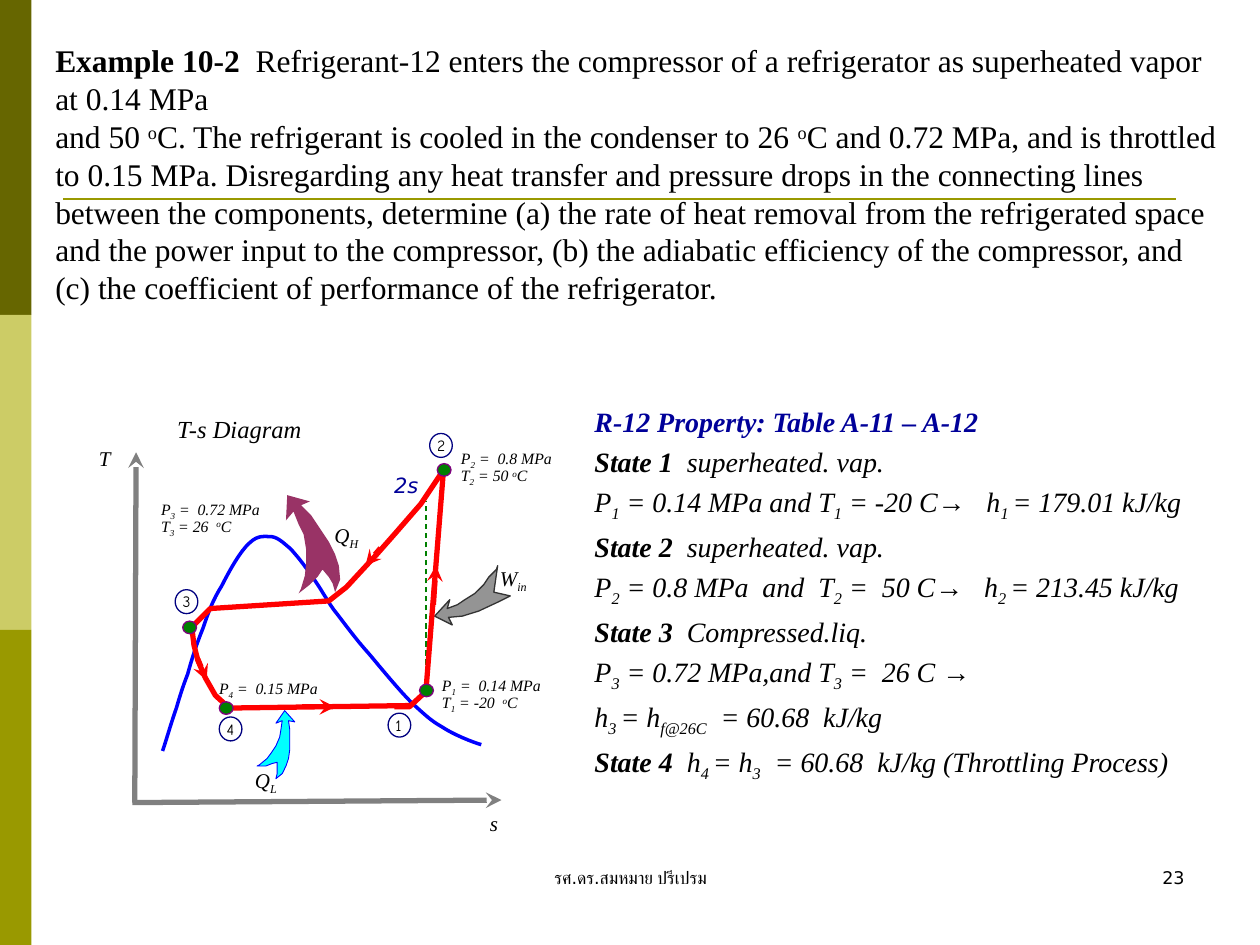
from lxml import etree
from pptx import Presentation
from pptx.dml.color import RGBColor
from pptx.enum.dml import MSO_LINE
from pptx.enum.shapes import MSO_CONNECTOR, MSO_SHAPE
from pptx.enum.text import MSO_AUTO_SIZE, PP_ALIGN
from pptx.oxml.ns import qn
from pptx.util import Cm, Pt

RECTANGLE, ELLIPSE = MSO_SHAPE.RECTANGLE, MSO_SHAPE.OVAL
STRAIGHT, DASH = MSO_CONNECTOR.STRAIGHT, MSO_LINE.DASH
LEFT, CENTER, RIGHT = PP_ALIGN.LEFT, PP_ALIGN.CENTER, PP_ALIGN.RIGHT
GROW, FIXED = MSO_AUTO_SIZE.SHAPE_TO_FIT_TEXT, MSO_AUTO_SIZE.NONE

BLACK = RGBColor(0x00, 0x00, 0x00)
DARK_OLIVE = RGBColor(0x66, 0x66, 0x00)
PALE_OLIVE = RGBColor(0xCC, 0xCC, 0x66)
OLIVE = RGBColor(0x99, 0x99, 0x00)
RED = RGBColor(0xFF, 0x00, 0x00)
BLUE = RGBColor(0x00, 0x00, 0xFF)
NAVY = RGBColor(0x00, 0x00, 0x80)
INK_BLUE = RGBColor(0x00, 0x00, 0x99)
CYAN = RGBColor(0x00, 0xFF, 0xFF)
GREEN = RGBColor(0x00, 0x80, 0x00)
PURPLE = RGBColor(0x80, 0x00, 0x80)
PLUM = RGBColor(0x99, 0x33, 0x66)
GRAY = RGBColor(0x80, 0x80, 0x80)
CHARCOAL = RGBColor(0x33, 0x33, 0x33)

SERIF, SANS, HAND = "Times New Roman", "DejaVu Sans", "Comic Neue"
BASELINES = {"_": "-25000", "^": "30000"}


def inches(value):
    return Cm(value * 2.54)


def curve_points(start, segments, steps=8):
    points = [start]
    for x1, y1, x2, y2, x3, y3 in segments:
        x0, y0 = points[-1]
        for step in range(1, steps + 1):
            t = step / steps
            weights = (1 - t) ** 3, 3 * t * (1 - t) ** 2, 3 * t * t * (1 - t), t ** 3
            points.append(tuple(sum(w * c for w, c in zip(weights, values))
                                for values in ((x0, x1, x2, x3), (y0, y1, y2, y3))))
    return points


class SlideBuilder:
    def __init__(self, slide):
        self.slide = slide
        self.font = SERIF

    def paint(self, shape, fill=None, line=None, width=0.75, alpha=None):
        shape.shadow.inherit = False
        if fill is None:
            shape.fill.background()
        else:
            shape.fill.solid()
            shape.fill.fore_color.rgb = fill
        if alpha:
            color = shape._element.spPr.find(qn("a:solidFill"))[0]
            etree.SubElement(color, qn("a:alpha")).set("val", str(alpha * 1000))
        if line is None:
            shape.line.fill.background()
        else:
            shape.line.color.rgb = line
            shape.line.width = Pt(width)

    def shape(self, kind, left, top, width, height, **paint):
        box = map(inches, (left, top, width, height))
        self.paint(self.slide.shapes.add_shape(kind, *box), **paint)

    def outline(self, points, closed=True, **paint):
        start, *rest = [(inches(x), inches(y)) for x, y in points]
        builder = self.slide.shapes.build_freeform(*start)
        builder.add_line_segments(rest, close=closed)
        self.paint(builder.convert_to_shape(), **paint)

    def line(self, start, end, color=RED, width=3, arrow=False, dash=None):
        ends = map(inches, (*start, *end))
        connector = self.slide.shapes.add_connector(STRAIGHT, *ends)
        connector.line.color.rgb = color
        connector.line.width = Pt(width)
        if dash:
            connector.line.dash_style = dash
        properties = connector._element.spPr
        if arrow:
            tail = etree.SubElement(properties.find(qn("a:ln")), qn("a:tailEnd"))
            tail.set("type", "stealth")
        etree.SubElement(properties, qn("a:effectLst"))

    def text(self, box, lines, size, font=None, color=BLACK, title_color=None,
             align=LEFT, italic=False, before=0, spacing=None, wrap=True, grow=True):
        shape = self.slide.shapes.add_textbox(*map(inches, box))
        frame = shape.text_frame
        frame.word_wrap = wrap
        frame.auto_size = GROW if grow else FIXED
        for index, line in enumerate(lines):
            paragraph = frame.paragraphs[0] if index == 0 else frame.add_paragraph()
            paragraph.alignment = align
            paragraph.space_before = Pt(before)
            if spacing:
                paragraph.line_spacing = spacing
            paragraph.font.name = font or self.font
            paragraph.font.size = Pt(size)
            paragraph.font.italic = italic
            paragraph.font.color.rgb = title_color if title_color and index == 0 else color
            for piece in line.split("|"):
                run = paragraph.add_run()
                run.text = piece.lstrip("*_^")
                if piece.startswith("*"):
                    run.font.bold = True
                elif piece[:1] in BASELINES:
                    run._r.get_or_add_rPr().set("baseline", BASELINES[piece[0]])

    def state_number(self, number, left, top):
        self.text((left - 0.04, top - 0.03, 0.22, 0.25), [number], 9, HAND,
                  align=CENTER, before=5.4)
        self.shape(ELLIPSE, left, top, 0.18, 0.19, line=NAVY)

    def state_point(self, left, top):
        self.shape(ELLIPSE, left, top, 0.11, 0.1, fill=GREEN, line=PURPLE)

    def label(self, box, text, size=12, **style):
        self.text(box, [text], size, align=CENTER, italic=True, **style)


def draw_frame(builder):
    for index, color in enumerate((DARK_OLIVE, PALE_OLIVE, OLIVE)):
        builder.shape(RECTANGLE, 0, 2.5 * index, 0.25, 2.5, fill=color)
    builder.line((0.5, 1.58), (9.33, 1.58), OLIVE, 1.5)
    builder.text((3.42, 6.83, 3.17, 0.5), ["รศ.ดร.สมหมาย ปรีเปรม"], 10, SANS,
                 align=CENTER, grow=False)
    builder.text((7.17, 6.83, 2.33, 0.5), ["23"], 10, SANS, align=RIGHT, grow=False)


def draw_problem(builder):
    builder.text((0.34, 0.28, 9.49, 2.2), [
        "*Example 10-2|  Refrigerant-12 enters the compressor of a refrigerator as "
        "superheated vapor at 0.14 MPa",
        "and 50 |^o|C. The refrigerant is cooled in the condenser to 26 |^o|C and 0.72 MPa, "
        "and is throttled to 0.15 MPa. Disregarding any heat transfer and pressure drops in "
        "the connecting lines between the components, determine (a) the rate of heat removal "
        "from the refrigerated space and the power input to the compressor, (b) the adiabatic "
        "efficiency of the compressor, and (c) the coefficient of performance of the "
        "refrigerator."], 18)


def draw_diagram(builder):
    builder.line((1.8, 5.62), (3.26, 5.6))
    builder.outline([
        (2.19, 6.18), (2.24, 6.14), (2.27, 6.08), (2.29, 6.02), (2.3, 5.95), (2.3, 5.79),
        (2.29, 5.72), (2.34, 5.73), (2.26, 5.64), (2.19, 5.74), (2.24, 5.72), (2.23, 5.79),
        (2.22, 5.85), (2.19, 5.92), (2.15, 5.98), (2.12, 6.02), (2.06, 6.07), (2.04, 6.08),
        (2.11, 6.08), (2.16, 6.06), (2.2, 6.05), (2.2, 6.14)], fill=CYAN, line=BLUE, width=0.5)
    builder.label((1.92, 6.04, 0.38, 0.3), "Q|_L", wrap=False)
    builder.line((2.4, 5.61), (2.66, 5.61), arrow=True)
    builder.label((0.91, 3.24, 1.98, 0.33), "T-s Diagram", 14, before=8.4)
    saturation_dome = curve_points((1.29, 5.96), [
        (1.31, 5.91, 1.36, 5.73, 1.4, 5.62), (1.43, 5.52, 1.45, 5.45, 1.49, 5.35),
        (1.52, 5.24, 1.56, 5.11, 1.61, 4.99), (1.65, 4.87, 1.69, 4.76, 1.76, 4.65),
        (1.82, 4.53, 1.91, 4.37, 1.98, 4.31), (2.05, 4.24, 2.11, 4.26, 2.16, 4.26),
        (2.21, 4.27, 2.24, 4.3, 2.3, 4.35), (2.35, 4.4, 2.42, 4.49, 2.48, 4.58),
        (2.54, 4.66, 2.58, 4.74, 2.65, 4.84), (2.73, 4.94, 2.82, 5.07, 2.93, 5.19),
        (3.03, 5.31, 3.17, 5.48, 3.27, 5.58), (3.37, 5.67, 3.42, 5.72, 3.51, 5.77),
        (3.6, 5.83, 3.75, 5.89, 3.82, 5.91)])
    builder.outline(saturation_dome, closed=False, line=BLUE, width=2)
    builder.label((0.62, 3.49, 0.42, 0.37), "T", grow=False)
    builder.line((1.07, 6.37), (1.08, 3.59), GRAY, arrow=True)
    builder.line((1.05, 6.37), (3.98, 6.35), GRAY, arrow=True)
    builder.label((3.66, 6.38, 0.52, 0.37), "s", grow=False)
    builder.outline([(1.52, 4.96), (1.54, 5.12), (1.57, 5.24), (1.63, 5.38), (1.71, 5.52),
                     (1.82, 5.62)], closed=False, line=RED, width=3)
    builder.state_number("4", 1.74, 5.69)
    builder.line((1.57, 5.23), (1.64, 5.4), arrow=True)
    builder.state_point(1.74, 5.57)
    builder.line((3.02, 4.35), (2.9, 4.49), arrow=True)
    builder.label((3.86, 4.44, 0.43, 0.3), "W|_in", wrap=False)
    builder.outline([
        (4.05, 4.73), (3.95, 4.78), (3.8, 4.85), (3.67, 4.89), (3.56, 4.9), (3.59, 4.96),
        (3.45, 4.89), (3.57, 4.76), (3.55, 4.83), (3.63, 4.8), (3.69, 4.76), (3.77, 4.71),
        (3.84, 4.64), (3.88, 4.58), (3.94, 4.52), (3.95, 4.49), (3.92, 4.7)],
        fill=GRAY, alpha=84, line=CHARCOAL)
    builder.line((3.38, 5.49), (3.38, 3.98), GREEN, 0.75, dash=DASH)
    builder.line((3.44, 4.8), (3.46, 4.49), arrow=True)
    builder.state_number("1", 3.08, 5.66)
    builder.state_number("2", 3.41, 3.44)
    builder.outline([(1.53, 4.97), (1.67, 4.83), (2.61, 4.77), (2.75, 4.66), (2.99, 4.4),
                     (3.14, 4.23), (3.34, 4), (3.54, 3.7)], closed=False, line=RED, width=3)
    builder.state_number("3", 1.39, 4.68)
    builder.state_point(1.45, 4.93)
    builder.outline([
        (2.66, 4.7), (2.7, 4.6), (2.69, 4.49), (2.66, 4.4), (2.61, 4.3), (2.53, 4.18),
        (2.47, 4.09), (2.39, 4.01), (2.46, 3.98), (2.28, 3.93), (2.27, 4.13), (2.33, 4.06),
        (2.37, 4.16), (2.41, 4.24), (2.43, 4.36), (2.43, 4.47), (2.42, 4.57), (2.39, 4.67),
        (2.37, 4.71), (2.46, 4.64), (2.52, 4.58), (2.56, 4.52), (2.61, 4.58), (2.64, 4.63)],
        fill=PLUM)
    builder.label((2.55, 4.1, 0.4, 0.3), "Q|_H", wrap=False)
    builder.line((3.38, 5.49), (3.52, 3.73))
    builder.state_point(3.47, 3.68)
    for box, lines in (
            ((3.56, 3.53, 0.95, 0.34), ["P|_2| =  0.8 MPa", "T|_2| = 50 |^o|C"]),
            ((3.41, 5.33, 1.06, 0.34), ["P|_1| =  0.14 MPa", "T|_1| = -20  |^o|C"]),
            ((1.18, 3.93, 1.06, 0.34), ["P|_3| =  0.72 MPa", "T|_3| = 26  |^o|C"]),
            ((1.64, 5.35, 1.06, 0.22), ["P|_4| =  0.15 MPa"])):
        builder.text(box, lines, 9, italic=True, spacing=0.8)
    builder.text((3.03, 3.7, 0.41, 0.3), ["2s"], 12, SANS, INK_BLUE, italic=True, before=7.2)
    builder.outline([(3.13, 5.61), (3.25, 5.61), (3.39, 5.48)], closed=False, line=RED, width=3)
    builder.state_point(3.33, 5.43)


def draw_properties(builder):
    builder.text((4.62, 3.16, 5.04, 3.2), [
        "*R-12 Property: Table A-11 – A-12",
        "*State 1|  superheated. vap.",
        "P|_1| = 0.14 MPa and T|_1| = -20 C→   h|_1 |= 179.01 kJ/kg",
        "*State 2|  superheated. vap.",
        "P|_2| = 0.8 MPa  and  T|_2| =  50 C→   h|_2 |= 213.45 kJ/kg",
        "*State 3|  Compressed.liq.",
        "P|_3| = 0.72 MPa,and T|_3| =  26 C →",
        "h|_3 |= h|_f@26C|  = 60.68  kJ/kg",
        "*State 4  |h|_4 |= h|_3|  = 60.68  kJ/kg (Throttling Process)"],
        16, title_color=INK_BLUE, italic=True, before=3.8)


def main():
    presentation = Presentation()
    presentation.slide_width, presentation.slide_height = Cm(25.4), Cm(19.05)
    builder = SlideBuilder(presentation.slides.add_slide(presentation.slide_layouts[6]))
    for draw in (draw_frame, draw_problem, draw_diagram, draw_properties):
        draw(builder)
    presentation.save("out.pptx")


if __name__ == "__main__":
    main()
